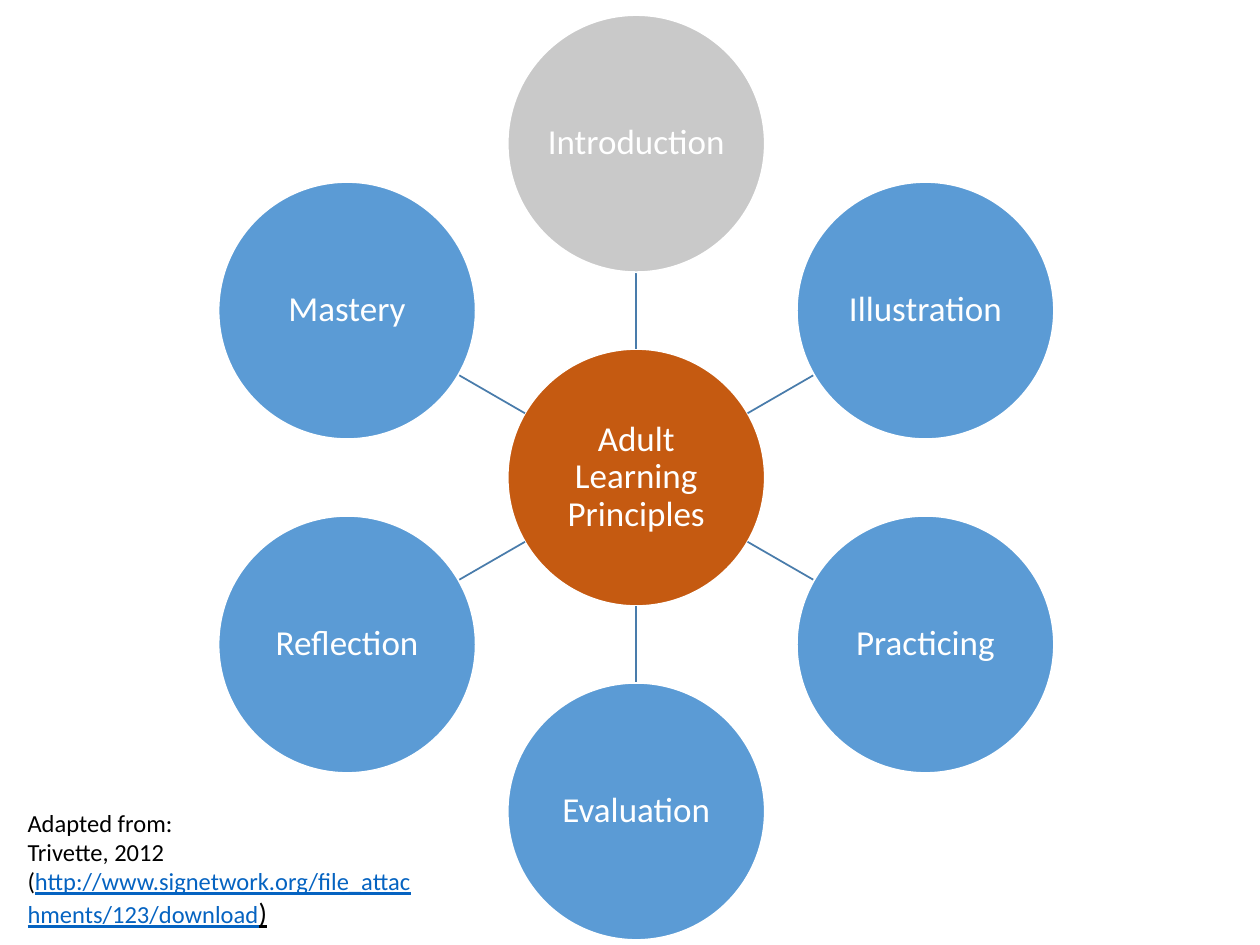
"""Build a hub-and-spoke slide of adult learning principles."""
from dataclasses import dataclass
from math import cos, radians, sin

from lxml.etree import SubElement
from pptx import Presentation
from pptx.dml.color import RGBColor
from pptx.enum.shapes import MSO_CONNECTOR, MSO_SHAPE
from pptx.enum.text import MSO_ANCHOR, MSO_AUTO_SIZE, PP_ALIGN
from pptx.oxml.ns import qn
from pptx.slide import Slide
from pptx.util import Inches, Pt

COLORS = {
    "hub": "C55A11",
    "intro": "C9C9C9",
    "step": "5B9BD5",
    "spoke": "497CAB",
    "white": "FFFFFF",
    "black": "000000",
    "link": "0563C1",
}
FONT = "Calibri"
CENTER_X, CENTER_Y = 5.05, 3.79
ORBIT = 2.65
RADIUS = 1.02


@dataclass
class Node:
    label: str
    color: str


@dataclass
class Span:
    text: str
    size: int = 14
    color: str = "black"
    underline: bool = False


HUB = Node("Adult Learning Principles", "hub")
STEPS = [
    Node("Introduction", "intro"),
    Node("Illustration", "step"),
    Node("Practicing", "step"),
    Node("Evaluation", "step"),
    Node("Reflection", "step"),
    Node("Mastery", "step"),
]
SOURCE = [
    [Span("Adapted from:")],
    [
        Span("Trivette, 2012 ("),
        Span("http://www.signetwork.org/file_attachments/123/download", color="link", underline=True),
        Span(")", size=16, underline=True),
    ],
]


def rgb(name: str) -> RGBColor:
    return RGBColor.from_string(COLORS[name])


def add_span(p, span: Span) -> None:
    r = p.add_run()
    r.text = span.text
    r.font.name = FONT
    r.font.size = Pt(span.size)
    r.font.color.rgb = rgb(span.color)
    if span.underline:
        r.font.underline = True


def polar(angle: float, distance: float) -> tuple[float, float]:
    return CENTER_X + distance * cos(angle), CENTER_Y + distance * sin(angle)


def add_spoke(s: Slide, angle: float) -> None:
    ends = [Inches(v) for d in (RADIUS, ORBIT - RADIUS) for v in polar(angle, d)]
    line = s.shapes.add_connector(MSO_CONNECTOR.STRAIGHT, *ends)
    line.line.color.rgb = rgb("spoke")
    line.line.width = Pt(1)
    SubElement(line._element.spPr, qn("a:effectLst"))


def add_node(s: Slide, node: Node, x: float, y: float) -> None:
    size = Inches(2 * RADIUS)
    sp = s.shapes.add_shape(MSO_SHAPE.OVAL, Inches(x - RADIUS), Inches(y - RADIUS), size, size)
    sp.shadow.inherit = False
    sp.fill.solid()
    sp.fill.fore_color.rgb = rgb(node.color)
    sp.line.color.rgb = rgb("white")
    sp.line.width = Pt(1)
    tf = sp.text_frame
    tf.word_wrap = True
    tf.vertical_anchor = MSO_ANCHOR.MIDDLE
    tf.margin_left = tf.margin_right = tf.margin_top = tf.margin_bottom = Inches(0.01)
    p = tf.paragraphs[0]
    p.alignment = PP_ALIGN.CENTER
    p.line_spacing = 0.9
    add_span(p, Span(node.label, 20, "white"))


def add_source(s: Slide) -> None:
    box = s.shapes.add_textbox(Inches(0.12), Inches(6.36), Inches(3.31), Inches(1.08))
    tf = box.text_frame
    tf.word_wrap = True
    tf.auto_size = MSO_AUTO_SIZE.SHAPE_TO_FIT_TEXT
    for i, spans in enumerate(SOURCE):
        p = tf.add_paragraph() if i else tf.paragraphs[0]
        for span in spans:
            add_span(p, span)


def main() -> None:
    prs = Presentation()
    prs.slide_width, prs.slide_height = Inches(10), Inches(7.5)
    s = prs.slides.add_slide(prs.slide_layouts[6])
    add_node(s, HUB, CENTER_X, CENTER_Y)
    for i, node in enumerate(STEPS):
        angle = radians(360 / len(STEPS) * i - 90)
        add_spoke(s, angle)
        add_node(s, node, *polar(angle, ORBIT))
    add_source(s)
    prs.save("out.pptx")


if __name__ == "__main__":
    main()
